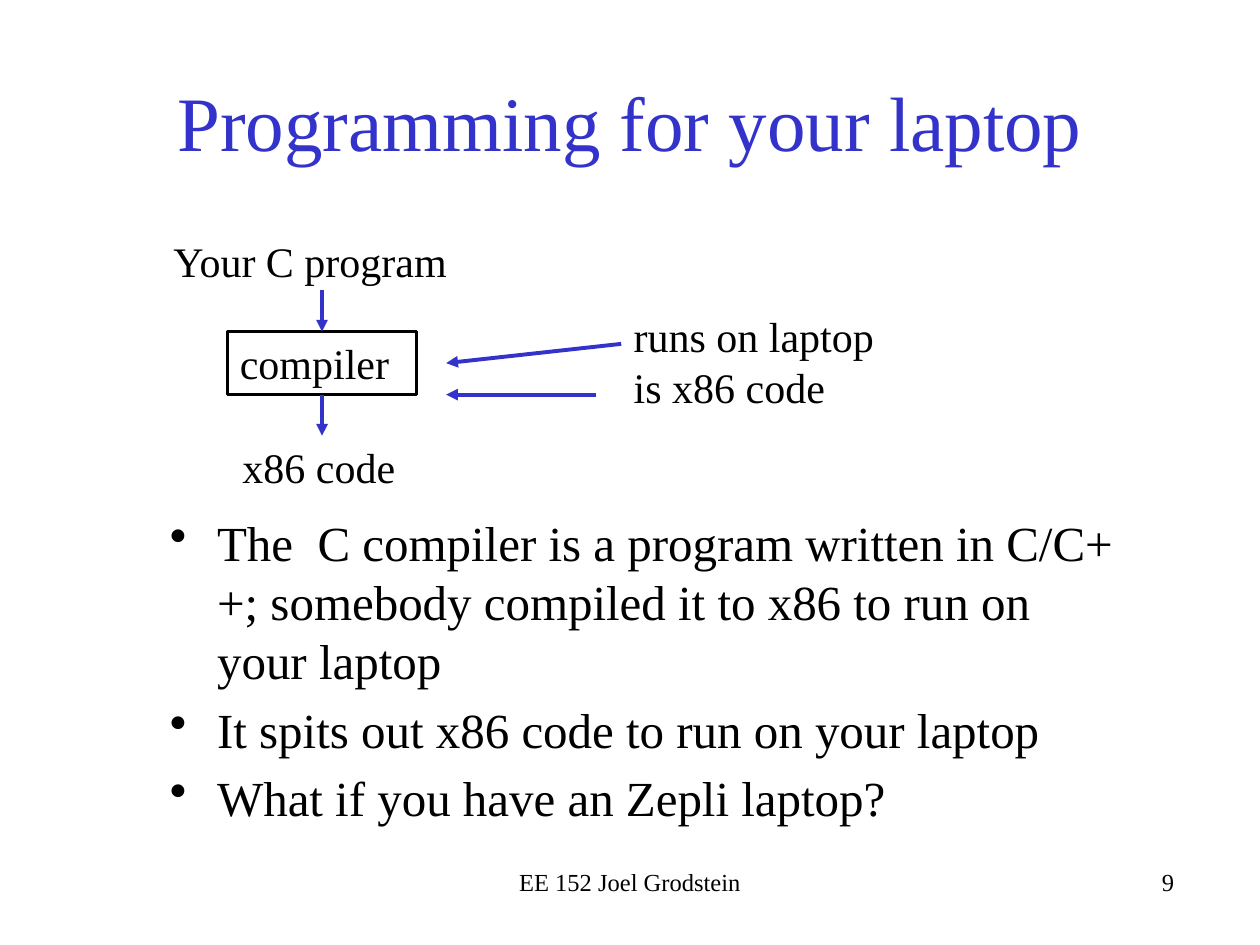
from lxml import etree
from pptx import Presentation
from pptx import util as u
from pptx.dml import color
from pptx.enum import shapes, text
from pptx.oxml import ns

BLACK, BLUE = "000000", "3333CC"


def rgb(value):
    return color.RGBColor.from_string(value)


def set_values(target, values):
    for name, value in values.items():
        setattr(target, name, value)


class SlideBuilder:
    """Holds the text and line style and the slide being filled."""
    font = "Times New Roman"
    arrow_width = 2.25
    box_width = 1.75

    def __init__(self, slide):
        self.slide = slide

    def set_text(self, shape, lines, size, ink=BLACK, frame=None, **paragraph_format):
        text_frame = shape.text_frame
        set_values(text_frame, {
            "word_wrap": True,
            "auto_size": text.MSO_AUTO_SIZE.NONE,
            "vertical_anchor": text.MSO_ANCHOR.TOP,
            **(frame or {}),
        })
        for index, line in enumerate(lines):
            paragraph = text_frame.paragraphs[0] if index == 0 else text_frame.add_paragraph()
            set_values(paragraph, {"alignment": text.PP_ALIGN.LEFT, **paragraph_format})
            run = paragraph.add_run()
            run.text = line
            set_values(run.font, {"name": self.font, "size": u.Pt(size)})
            run.font.color.rgb = rgb(ink)
        return shape

    def title(self, area, line):
        shape = self.slide.shapes.title
        set_values(shape, dict(zip(("left", "top", "width", "height"), map(u.Pt, area))))
        self.set_text(shape, [line], 44, BLUE, {"vertical_anchor": text.MSO_ANCHOR.MIDDLE},
                      alignment=text.PP_ALIGN.CENTER)

    def label(self, area, lines, size=24, **paragraph_format):
        shape = self.slide.shapes.add_textbox(*map(u.Pt, area))
        return self.set_text(shape, lines, size, **paragraph_format)

    def bullets(self, area, lines, size=28, indent=27):
        shape = self.label(area, lines, size, space_before=u.Pt(size * 0.2))
        for paragraph in shape.text_frame.paragraphs:
            properties = paragraph._p.get_or_add_pPr()
            properties.set("marL", str(u.Pt(indent)))
            properties.set("indent", str(u.Pt(-indent)))
            etree.SubElement(properties, ns.qn("a:buChar"), char="•")

    def box(self, area, line):
        shape = self.slide.shapes.add_shape(shapes.MSO_SHAPE.RECTANGLE, *map(u.Pt, area))
        shape.shadow.inherit = False
        shape.fill.background()
        shape.line.color.rgb = rgb(BLACK)
        shape.line.width = u.Pt(self.box_width)
        return self.set_text(shape, [line], 24)

    def arrow(self, start, end):
        connector = self.slide.shapes.add_connector(
            shapes.MSO_CONNECTOR.STRAIGHT, *map(u.Pt, start + end))
        connector.line.color.rgb = rgb(BLUE)
        connector.line.width = u.Pt(self.arrow_width)
        properties = connector._element.spPr
        etree.SubElement(properties.find(ns.qn("a:ln")), ns.qn("a:tailEnd"), type="triangle")
        etree.SubElement(properties, ns.qn("a:effectLst"))
        return connector


def main():
    presentation = Presentation()
    presentation.slide_width, presentation.slide_height = u.Pt(720), u.Pt(540)
    title_only = presentation.slide_layouts[5]
    builder = SlideBuilder(presentation.slides.add_slide(title_only))

    builder.title((54, 24, 612, 90), "Programming for your laptop")
    builder.bullets((90, 289.5, 561.5, 191.5), [
        "The  C compiler is a program written in C/C++; "
        "somebody compiled it to x86 to run on your laptop",
        "It spits out x86 code to run on your laptop",
        "What if you have an Zepli laptop?",
    ])

    # Compile flow, top to bottom
    left, top, width, height = 130, 189.5, 108, 36
    middle, bottom, gap = left + width / 2, top + height, 23.5
    builder.label((92, 131, 184, height), ["Your C program"])
    compiler = builder.box((left, top, width, height), "compiler")
    builder.label((131.5, 249, width, height), ["x86 code"])
    builder.arrow((middle, top - gap), (middle, top)).end_connect(compiler, 0)
    builder.arrow((middle, bottom), (middle, bottom + gap)).begin_connect(compiler, 2)

    # Remarks on the compiler
    builder.label((355, 174, 167, 65.5), ["runs on laptop", "is x86 code"])
    builder.arrow((355, 196.5), (255, 207.5))
    builder.arrow((340.5, bottom), (255, bottom))

    footer_top, footer_width, footer_height = 492, 228, 36
    builder.label((246, footer_top, footer_width, footer_height),
                  ["EE 152 Joel Grodstein"], 14, alignment=text.PP_ALIGN.CENTER)
    builder.label((450, footer_top, footer_width, footer_height),
                  ["9"], 14, alignment=text.PP_ALIGN.RIGHT)

    presentation.save("out.pptx")


if __name__ == "__main__":
    main()
